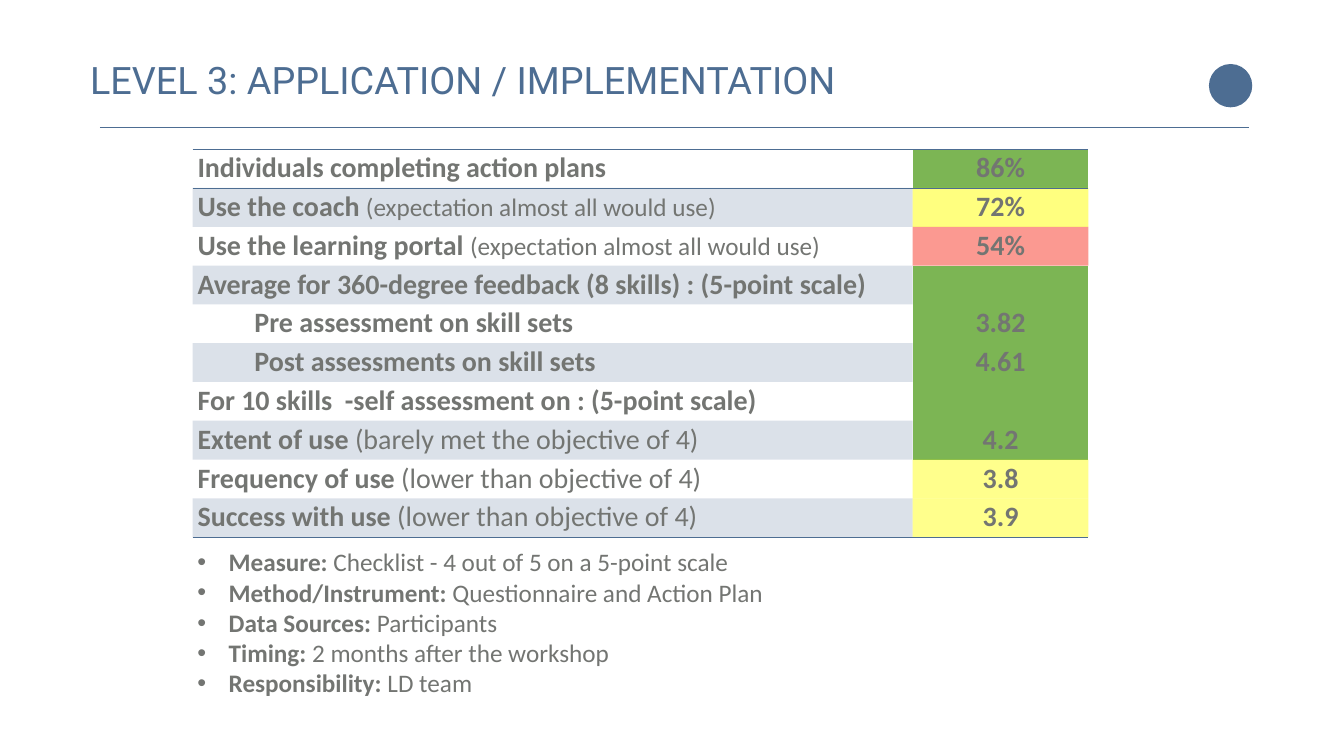
import pptx
import pptx.dml.color
import pptx.enum.shapes
import pptx.enum.text
import pptx.oxml
import pptx.oxml.ns
import pptx.util

Inches, Pt = pptx.util.Inches, pptx.util.Pt
ALIGN = pptx.enum.text.PP_ALIGN

COLORS = {"blue": "4D6D92", "text": "737572", "green": "7CB554",
          "yellow": "FFFF00", "red": "F95648"}
NO_STYLE_TABLE = "{2D5ABB26-0587-4C30-8999-92F81FD0307C}"
TITLE = {"name": "Roboto", "size": Pt(54), "bold": False}
STRONG = {"name": "Calibri", "size": Pt(40), "bold": True}
PLAIN = {**STRONG, "bold": False}
SMALL = {**PLAIN, "size": Pt(36)}
LABEL = {**SMALL, "bold": True}

GREEN, RED = ("green", 100), ("red", 60)
YELLOW, PALE_YELLOW = ("yellow", 50), ("yellow", 45)
BAND = ("blue", 20)

# label, remark, remark format, indented, value, value fill
RESULTS = [
    ("Individuals completing action plans", "", PLAIN, False, "86%", GREEN),
    ("Use the coach ", "(expectation almost all would use)", SMALL, False, "72%", YELLOW),
    ("Use the learning portal ", "(expectation almost all would use)", SMALL, False, "54%", RED),
    ("Average for 360-degree feedback (8 skills) : (5-point scale)", "", PLAIN, False, "", GREEN),
    ("Pre assessment on skill sets", "", PLAIN, True, "3.82", GREEN),
    ("Post assessments on skill sets", "", PLAIN, True, "4.61", GREEN),
    ("For 10 skills  -self assessment on : (5-point scale)", "", PLAIN, False, "", GREEN),
    ("Extent of use ", "(barely met the objective of 4)", PLAIN, False, "4.2", GREEN),
    ("Frequency of use ", "(lower than objective of 4)", PLAIN, False, "3.8", PALE_YELLOW),
    ("Success with use ", "(lower than objective of 4)", PLAIN, False, "3.9", PALE_YELLOW),
]
NOTES = [
    ("Measure: ", "Checklist - 4 out of 5 on a 5-point scale"),
    ("Method/Instrument: ", "Questionnaire and Action Plan"),
    ("Data Sources: ", "Participants"),
    ("Timing: ", "2 months after the workshop"),
    ("Responsibility: ", "LD team"),
]


def rgb(color):
    return pptx.dml.color.RGBColor.from_string(COLORS[color])


def make_element(xml):
    return pptx.oxml.parse_xml(xml.replace(">", f" {pptx.oxml.ns.nsdecls('a')}>", 1))


class SlideBuilder:
    """Holds the current slide and draws each kind of element on it."""

    def __init__(self, prs):
        self.s = prs.slides.add_slide(prs.slide_layouts[6])

    def add_runs(self, p, runs, color="text"):
        """Fill a paragraph with (text, format) runs, skipping empty ones."""
        for text, style in runs:
            if text:
                r = p.add_run()
                r.text = text
                for key, value in style.items():
                    setattr(r.font, key, value)
                r.font.color.rgb = rgb(color)

    def circle(self, x, y, size):
        sp = self.s.shapes.add_shape(pptx.enum.shapes.MSO_SHAPE.OVAL,
                                     Inches(x), Inches(y), Inches(size), Inches(size))
        sp.shadow.inherit = False
        sp.fill.solid()
        sp.fill.fore_color.rgb = rgb("blue")
        sp.line.fill.background()

    def rule(self, x1, x2, y, width):
        sp = self.s.shapes.add_connector(pptx.enum.shapes.MSO_CONNECTOR.STRAIGHT,
                                         Inches(x1), Inches(y), Inches(x2), Inches(y))
        sp.line.color.rgb = rgb("blue")
        sp.line.width = Pt(width)
        sp._element.spPr.append(make_element("<a:effectLst></a:effectLst>"))

    def text_box(self, x, y, w, h, wrap=True):
        sp = self.s.shapes.add_textbox(Inches(x), Inches(y), Inches(w), Inches(h))
        sp.text_frame.word_wrap = wrap
        return sp.text_frame

    def title(self, text, *box):
        self.add_runs(self.text_box(*box).paragraphs[0], [(text, TITLE)], "blue")

    def bullets(self, items, *box, indent=0.62):
        tf = self.text_box(*box, wrap=False)
        for i, (label, text) in enumerate(items):
            p = tf.add_paragraph() if i else tf.paragraphs[0]
            pPr = p._p.get_or_add_pPr()
            pPr.set("marL", str(Inches(indent)))
            pPr.set("indent", str(-Inches(indent)))
            pPr.append(make_element('<a:buFont typeface="Arial"></a:buFont>'))
            pPr.append(make_element('<a:buChar char="•"></a:buChar>'))
            self.add_runs(p, [(label, LABEL), (text, SMALL)])

    def fill_cell(self, cell, fill):
        """Fill with a (colour, opacity percent) pair, or leave clear for None."""
        if fill is None:
            cell.fill.background()
            return
        color, opacity = fill
        cell.fill.solid()
        cell.fill.fore_color.rgb = rgb(color)
        if opacity < 100:
            clr = cell._tc.tcPr.find(".//" + pptx.oxml.ns.qn("a:srgbClr"))
            clr.append(make_element(f'<a:alpha val="{opacity * 1000}"></a:alpha>'))

    def border_cell(self, cell, sides):
        """Draw thin borders; sides come in schema order, ahead of the fill."""
        for i, side in enumerate(sides):
            cell._tc.get_or_add_tcPr().insert(i, make_element(
                f'<a:ln{side} w="{Pt(1)}"><a:solidFill>'
                f'<a:srgbClr val="{COLORS["blue"]}"/></a:solidFill></a:ln{side}>'))

    def results_table(self, results, x, y, widths, row_height):
        frame = self.s.shapes.add_table(len(results), len(widths), Inches(x), Inches(y),
                                        Inches(sum(widths)), Inches(row_height * len(results)))
        table = frame.table
        table._tbl.tblPr.find(pptx.oxml.ns.qn("a:tableStyleId")).text = NO_STYLE_TABLE
        for column, width in zip(table.columns, widths):
            column.width = Inches(width)
        borders = {0: "TB", len(results) - 1: "B"}
        for i, (label, remark, style, indented, value, fill) in enumerate(results):
            table.rows[i].height = Inches(row_height)
            name_cell, value_cell = table.cell(i, 0), table.cell(i, 1)
            for cell, cell_fill in ((name_cell, BAND if i % 2 else None), (value_cell, fill)):
                cell.margin_top = cell.margin_bottom = Inches(0.04)
                self.fill_cell(cell, cell_fill)
                self.border_cell(cell, borders.get(i, ""))
            name_cell.margin_left = Inches(1.23 if indented else 0.1)
            self.add_runs(name_cell.text_frame.paragraphs[0], [(label, STRONG), (remark, style)])
            p = value_cell.text_frame.paragraphs[0]
            p.alignment = ALIGN.CENTER
            self.add_runs(p, [(value, STRONG)])


def main():
    prs = pptx.Presentation()
    prs.slide_width, prs.slide_height = Inches(26.67), Inches(15)
    slide = SlideBuilder(prs)
    slide.circle(23.99, 1.27, 0.86)
    slide.rule(1.98, 24.79, 2.53, 2.25)
    slide.title("LEVEL 3: APPLICATION / IMPLEMENTATION", 1.69, 1.07, 18.9, 1.01)
    slide.results_table(RESULTS, 3.82, 2.96, (14.29, 3.49), 0.77)
    slide.bullets(NOTES, 3.82, 10.8, 12, 3.13)
    prs.save("out.pptx")


if __name__ == "__main__":
    main()
